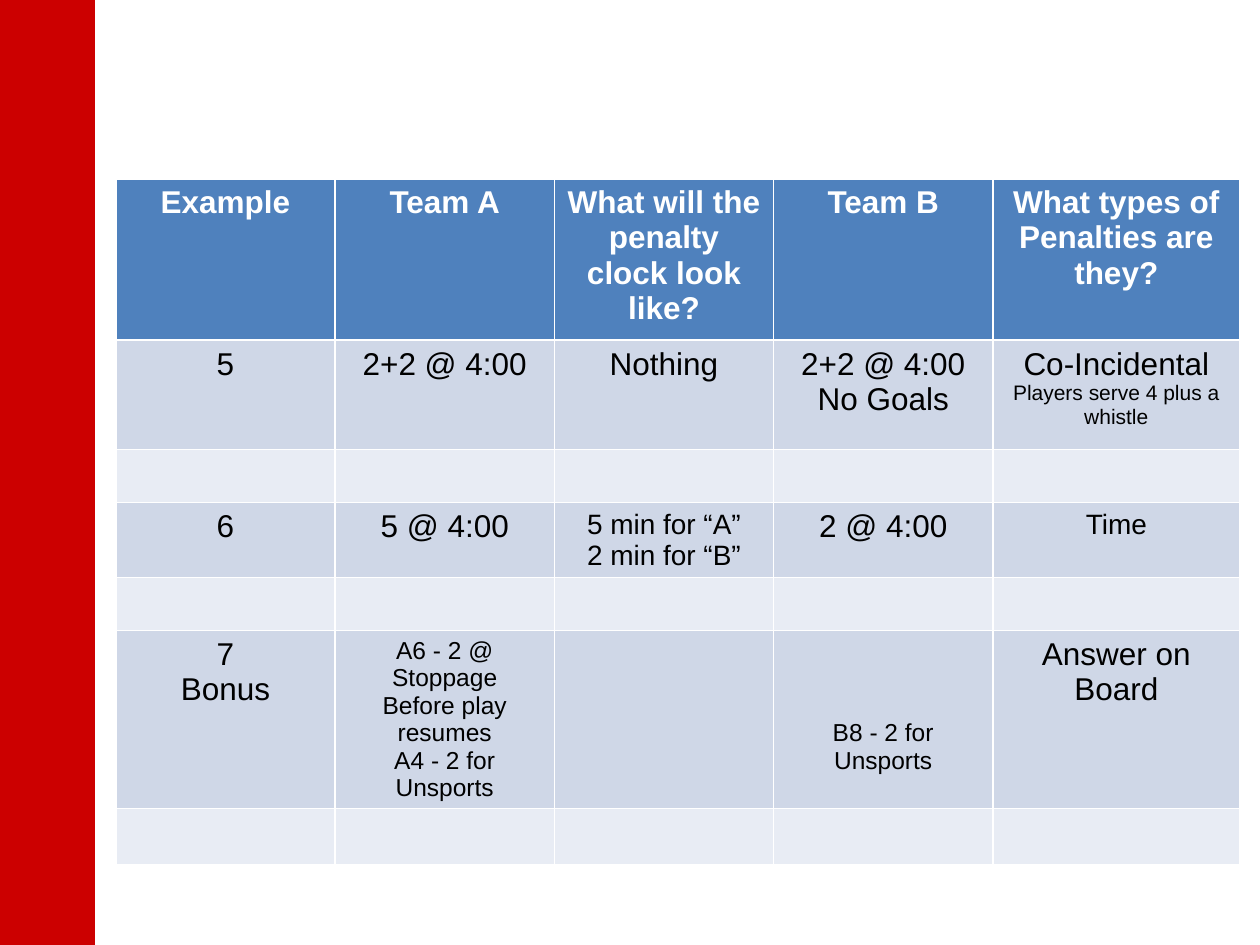
from pptx import Presentation
from pptx.dml.color import RGBColor
from pptx.enum.shapes import MSO_SHAPE
from pptx.enum.text import PP_ALIGN
from pptx.util import Pt

COLORS = {
    "bar": "CC0000",
    "header": "4F81BD",
    "filled": "CFD7E7",
    "spacer": "E8ECF4",
    "light": "FFFFFF",
    "dark": "000000",
}
WIDTHS = [125.3] * 4 + [141.1]
HEIGHTS = [92.2, 62.6, 30.2, 43, 30.2, 101.6, 32.4]
ROWS = {
    0: [
        [("Example", 18)],
        [("Team A", 18)],
        [("What will the penalty clock look like?", 18)],
        [("Team B", 18)],
        [("What types of Penalties are they?", 18)],
    ],
    1: [
        [("5", 18)],
        [("2+2 @ 4:00", 18)],
        [("Nothing", 18)],
        [("2+2 @ 4:00", 18), ("No Goals", 18)],
        [("Co-Incidental", 18), ("Players serve 4 plus a whistle", 12)],
    ],
    3: [
        [("6", 18)],
        [("5 @ 4:00", 18)],
        [("5 min for “A”", 16), ("2 min for “B”", 16)],
        [("2 @ 4:00", 18)],
        [("Time", 16)],
    ],
    5: [
        [("7", 18), ("Bonus", 18)],
        [("A6 - 2 @ Stoppage", 14), ("Before play resumes", 14), ("A4 - 2 for Unsports", 14)],
        [],
        [("B8 - 2 for Unsports", 14)],
        [("Answer on Board", 18)],
    ],
}


def rgb(name):
    return RGBColor.from_string(COLORS[name])


prs = Presentation()
prs.slide_width, prs.slide_height = Pt(720), Pt(540)
s = prs.slides.add_slide(prs.slide_layouts[6])

bar = s.shapes.add_shape(MSO_SHAPE.RECTANGLE, 0, 0, Pt(54), Pt(540))
bar.shadow.inherit = False
bar.fill.solid()
bar.fill.fore_color.rgb = rgb("bar")
bar.line.color.rgb = rgb("bar")
bar.line.width = Pt(0.75)

table = s.shapes.add_table(
    len(HEIGHTS), len(WIDTHS), Pt(66.2), Pt(102.2), Pt(sum(WIDTHS)), Pt(sum(HEIGHTS))
).table
for column, width in zip(table.columns, WIDTHS):
    column.width = Pt(width)

for i, height in enumerate(HEIGHTS):
    table.rows[i].height = Pt(height)
    fill = "header" if i == 0 else "filled" if i in ROWS else "spacer"
    for j, cell in enumerate(table.rows[i].cells):
        cell.fill.solid()
        cell.fill.fore_color.rgb = rgb(fill)
        tf = cell.text_frame
        lines = ROWS[i][j] if i in ROWS else []
        for n, (text, size) in enumerate(lines):
            p = tf.paragraphs[0] if n == 0 else tf.add_paragraph()
            p.text = text
            p.alignment = PP_ALIGN.CENTER
            p.font.name = "Arial"
            p.font.size = Pt(size)
            p.font.bold = i == 0
            p.font.color.rgb = rgb("light" if i == 0 else "dark")

table.cell(5, 3).margin_top = Pt(50.7)

prs.save("out.pptx")
